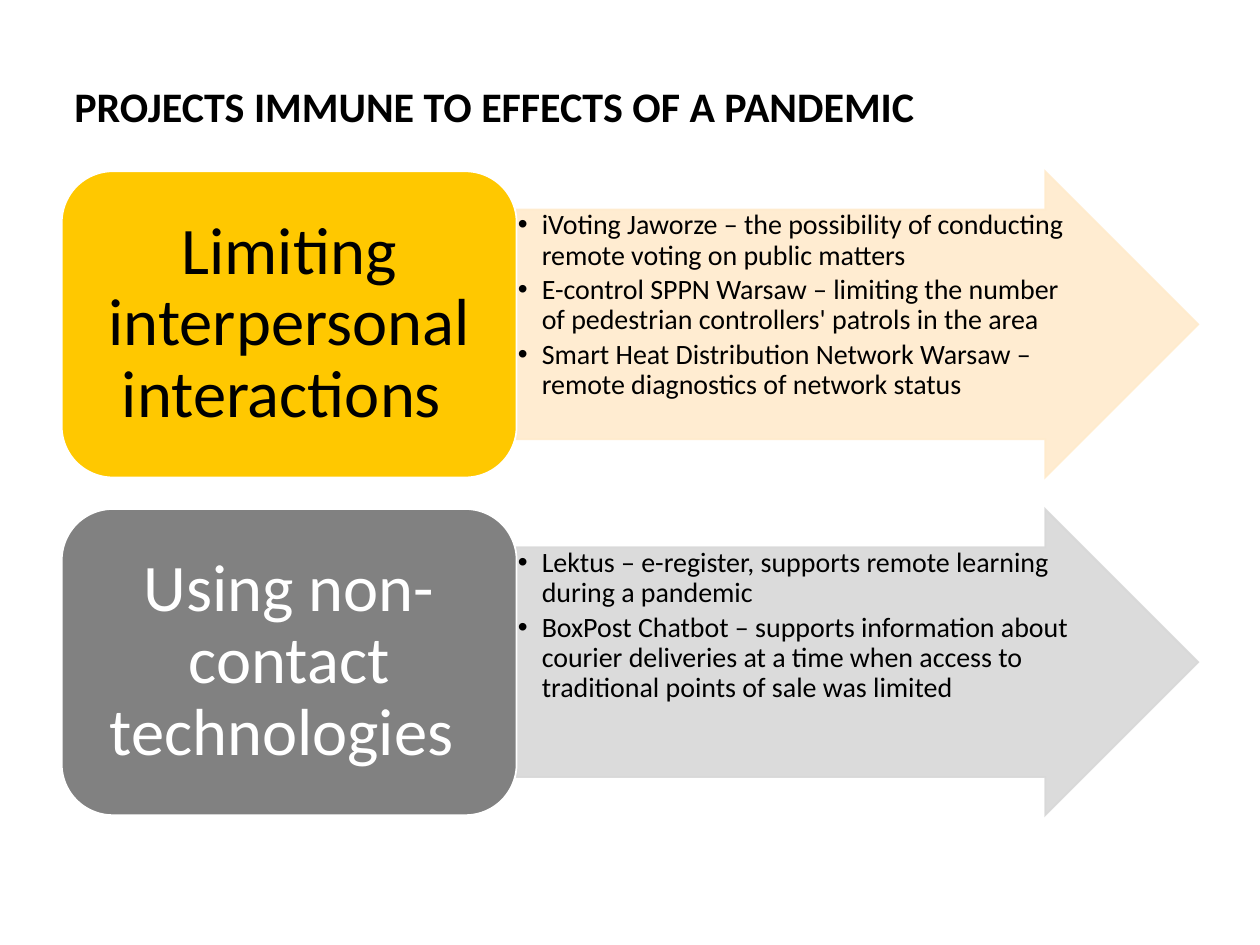
"""Build the slide on projects immune to the effects of a pandemic."""
from dataclasses import dataclass

import pptx
import pptx.dml.color
import pptx.enum.shapes
import pptx.enum.text
import pptx.oxml.ns
import pptx.util
from lxml import etree
from pptx.util import Inches


@dataclass(frozen=True)
class Theme:
    font: str = "Calibri"
    dark: str = "000000"
    light: str = "FFFFFF"
    yellow: str = "FFC800"
    cream: str = "FFEBCC"
    grey: str = "818181"
    silver: str = "D8D8D8"
    title_size: int = 24
    heading_size: int = 38
    project_size: int = 16


theme = Theme()
qn = pptx.oxml.ns.qn
rgb = pptx.dml.color.RGBColor.from_string
anchors = pptx.enum.text.MSO_ANCHOR
alignments = pptx.enum.text.PP_ALIGN


def add_run(paragraph, text, size, color, bold=False):
    run = paragraph.add_run()
    run.text = text
    run.font.name = theme.font
    run.font.size = pptx.util.Pt(size)
    run.font.bold = bold
    run.font.color.rgb = rgb(color)


def add_block(kind, left, top, width, fill, line, insets, anchor):
    block = slide.shapes.add_shape(kind, left, top, width, Inches(2.43))
    block.shadow.inherit = False
    block.fill.solid()
    block.fill.fore_color.rgb = rgb(fill)
    block.line.color.rgb = rgb(line)
    block.line.width = pptx.util.Pt(1)
    frame = block.text_frame
    frame.word_wrap = True
    frame.vertical_anchor = anchor
    frame.margin_left, frame.margin_top, frame.margin_right, frame.margin_bottom = map(Inches, insets)
    return block


groups = [
    (
        "Limiting interpersonal interactions ", theme.yellow, theme.dark, theme.cream,
        [
            "iVoting Jaworze – the possibility of conducting remote voting on public matters",
            "E-control SPPN Warsaw – limiting the number of pedestrian controllers' patrols in the area",
            "Smart Heat Distribution Network Warsaw – remote diagnostics of network status",
        ],
    ),
    (
        "Using non-contact technologies ", theme.grey, theme.light, theme.silver,
        [
            "Lektus – e-register, supports remote learning during a pandemic",
            "BoxPost Chatbot – supports information about courier deliveries at a time "
            "when access to traditional points of sale was limited",
        ],
    ),
]

presentation = pptx.Presentation()
presentation.slide_width = Inches(10)
presentation.slide_height = Inches(7.5)
slide = presentation.slides.add_slide(presentation.slide_layouts[5])

title = slide.shapes.title
title.left, title.top, title.width, title.height = map(Inches, (0.49, 0.54, 9.36, 0.51))
title.text_frame.word_wrap = True
title.text_frame.vertical_anchor = anchors.TOP
title_line = title.text_frame.paragraphs[0]
title_line.alignment = alignments.LEFT
title_line.line_spacing = 1.13
add_run(title_line, "PROJECTS IMMUNE TO EFFECTS OF A PANDEMIC", theme.title_size, theme.dark, True)

for index, (heading, heading_fill, heading_color, arrow_fill, projects) in enumerate(groups):
    top = Inches(1.36 + index * 2.68)

    arrow = add_block(
        pptx.enum.shapes.MSO_SHAPE.RIGHT_ARROW, Inches(4.1), top, Inches(5.41),
        arrow_fill, arrow_fill, (0.01, 0.01, 0.01, 0.01), anchors.TOP,
    )
    arrow.adjustments[0] = 0.75
    arrow.adjustments[1] = 0.5
    for color in arrow._element.spPr.iter(qn("a:srgbClr")):
        etree.SubElement(color, qn("a:alpha"), val="90000")
    outline = arrow._element.spPr.find(qn("a:ln"))
    etree.SubElement(outline, qn("a:miter"), lim="800000")

    for position, project in enumerate(projects):
        frame = arrow.text_frame
        item = frame.add_paragraph() if position else frame.paragraphs[0]
        item.alignment = alignments.LEFT
        item.line_spacing = 0.9
        item.space_after = pptx.util.Pt(2.5)
        properties = item._p.get_or_add_pPr()
        properties.set("marL", str(Inches(0.19)))
        properties.set("indent", str(-Inches(0.19)))
        etree.SubElement(properties, qn("a:buFont"), typeface="Arial")
        etree.SubElement(properties, qn("a:buChar"), char="•")
        add_run(item, project, theme.project_size, theme.dark)

    card = add_block(
        pptx.enum.shapes.MSO_SHAPE.ROUNDED_RECTANGLE, Inches(0.49), top, Inches(3.61),
        heading_fill, theme.light, (0.16, 0.08, 0.16, 0.08), anchors.MIDDLE,
    )
    label = card.text_frame.paragraphs[0]
    label.alignment = alignments.CENTER
    label.line_spacing = 0.9
    add_run(label, heading, theme.heading_size, heading_color)

presentation.save("out.pptx")
